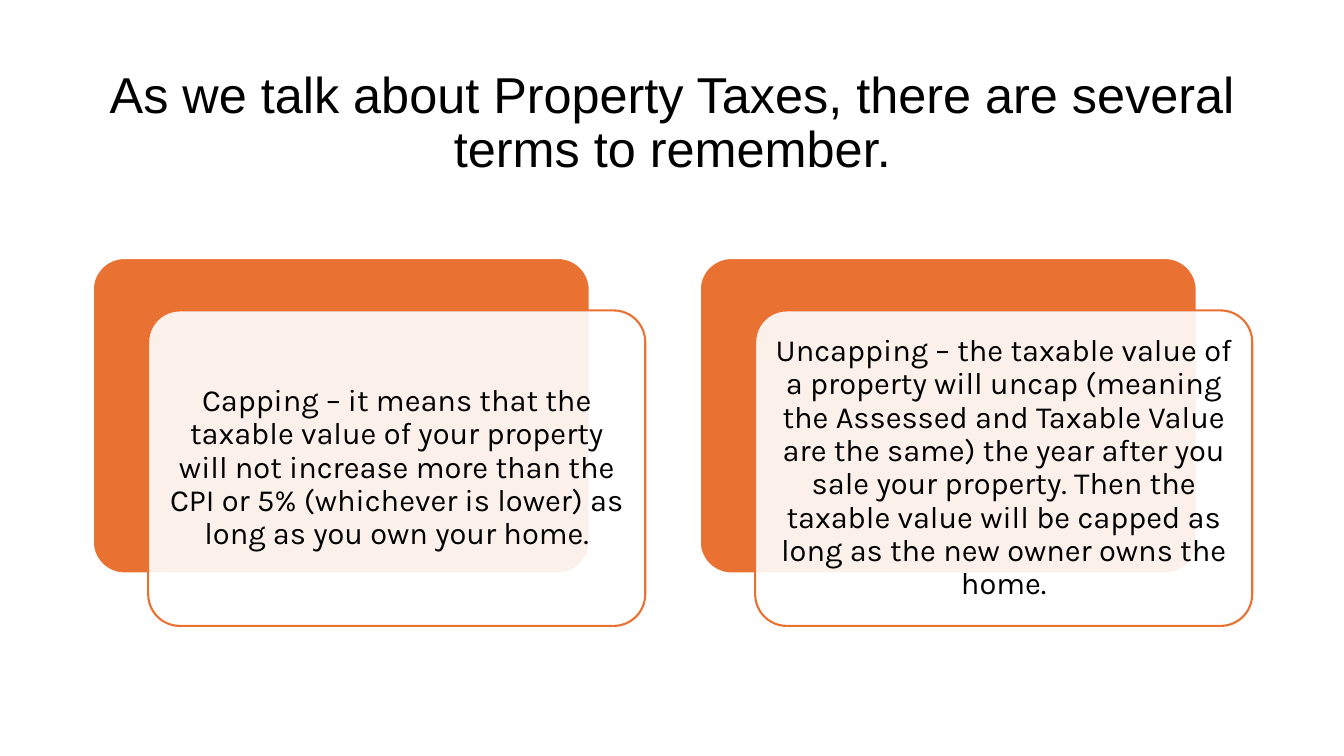
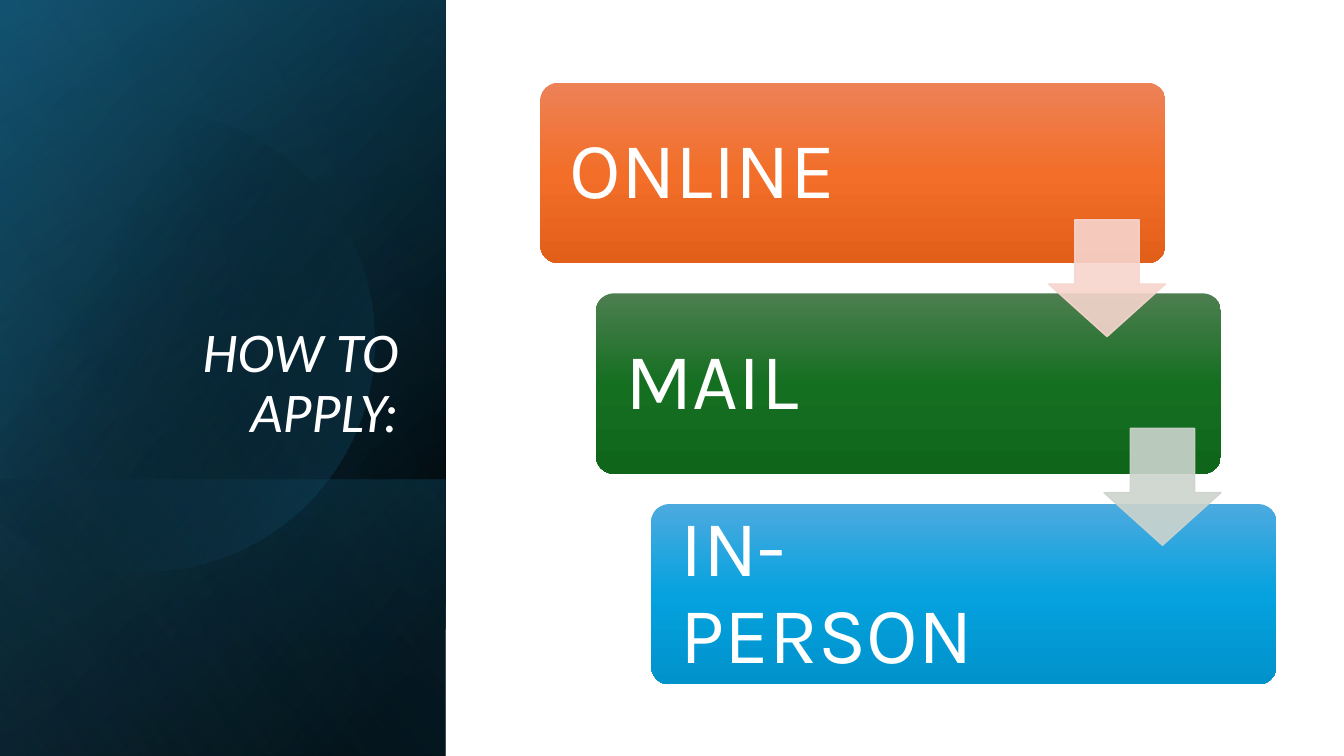
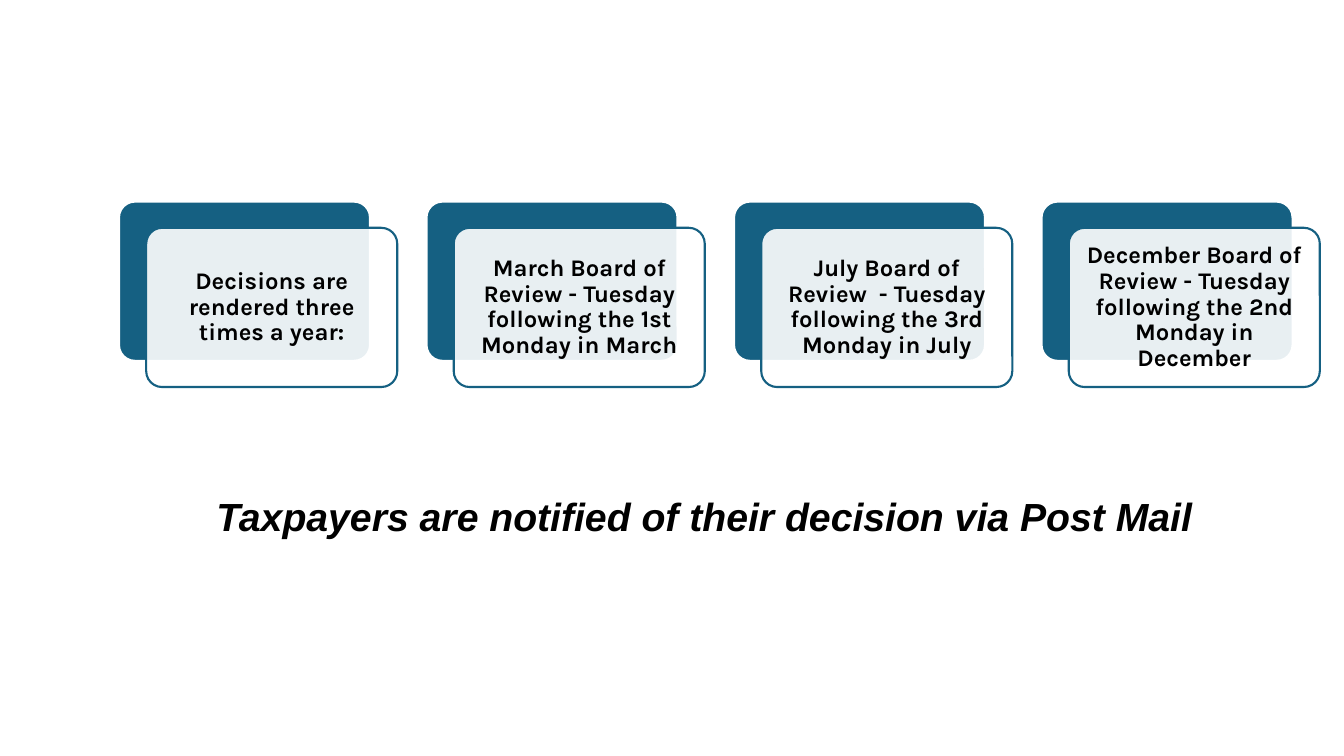
from math import acos, cos, pi, sin

from lxml import etree
from pptx import Presentation
from pptx import util as u
from pptx.dml.color import RGBColor
from pptx.enum import shapes, text
from pptx.oxml.ns import qn

COLOURS = {
    "white": "FFFFFF", "black": "000000",
    "orange": "E97132", "teal": "156082",
    "deep teal": "104862", "sky": "46B1E1",
    "pale orange": "F7D5CE", "pale green": "CCD4CD",
}
STEP_GRADIENTS = {
    "ONLINE": ("ED8257", "F26E29", "E25F1A"),
    "MAIL": ("4D7E50", "156F21", "0F661B"),
    "IN-PERSON": ("4CAADF", "05A2DF", "0092CB"),
}
CENTER, RIGHT, LEFT = text.PP_ALIGN.CENTER, text.PP_ALIGN.RIGHT, text.PP_ALIGN.LEFT
MIDDLE, BOTTOM, TOP = text.MSO_ANCHOR.MIDDLE, text.MSO_ANCHOR.BOTTOM, text.MSO_ANCHOR.TOP
ROUNDED = shapes.MSO_SHAPE.ROUNDED_RECTANGLE


# Fills and lines
def rgb(name):
    return RGBColor.from_string(COLOURS[name])


def set_alpha(shape, fill_tag, percent):
    for colour in shape._element.spPr.findall(f"{fill_tag}/{qn('a:srgbClr')}"):
        etree.SubElement(colour, qn("a:alpha")).set("val", str(percent * 1000))


def paint(shape, fill, line, weight=1.5, alpha=100, line_alpha=100):
    shape.shadow.inherit = False
    shape.fill.solid()
    shape.fill.fore_color.rgb = rgb(fill)
    shape.line.color.rgb = rgb(line)
    shape.line.width = u.Pt(weight)
    if alpha < 100:
        set_alpha(shape, qn("a:solidFill"), alpha)
    if line_alpha < 100:
        set_alpha(shape, f"{qn('a:ln')}/{qn('a:solidFill')}", line_alpha)


def paint_gradient(shape, stops, angle):
    """Each stop is (position %, hex colour, opacity %); the angle runs clockwise."""
    shape.shadow.inherit = False
    shape.line.fill.background()
    shape.fill.gradient()
    gradient = shape._element.spPr.find(qn("a:gradFill"))
    stop_list = gradient.find(qn("a:gsLst"))
    for default_stop in list(stop_list):
        stop_list.remove(default_stop)
    for position, colour, opacity in stops:
        stop = etree.SubElement(stop_list, qn("a:gs"), pos=str(position * 1000))
        tint = etree.SubElement(stop, qn("a:srgbClr"), val=colour)
        if opacity < 100:
            etree.SubElement(tint, qn("a:alpha"), val=str(opacity * 1000))
    gradient.find(qn("a:lin")).set("ang", str(angle * 60000))


# Text
def write(shape, wording, size, font, colour="black", align=CENTER, anchor=MIDDLE,
          bold=False, italic=False, spacing=0.9, insets=(0.1, 0.05, 0.1, 0.05)):
    frame = shape.text_frame
    frame.text = wording
    frame.word_wrap = True
    frame.vertical_anchor = anchor
    (frame.margin_left, frame.margin_top,
     frame.margin_right, frame.margin_bottom) = map(u.Inches, insets)
    paragraph = frame.paragraphs[0]
    paragraph.alignment = align
    paragraph.line_spacing = spacing
    style = paragraph.runs[0].font
    style.name, style.size = font, u.Pt(size)
    style.bold, style.italic = bold, italic
    style.color.rgb = rgb(colour)


def add_heading(slide, box, wording, size, font="Arial", **style):
    write(slide.shapes.add_textbox(*map(u.Inches, box)), wording, size, font, **style)


def add_preset(slide, preset, box, *adjustments):
    shape = slide.shapes.add_shape(preset, *map(u.Inches, box))
    for index, value in enumerate(adjustments):
        shape.adjustments[index] = value
    return shape


# Row of text cards, each in front of a coloured backing
def add_card_row(slide, wordings, first, size, pitch, shift, colour, points, inset, bold=False):
    for index, wording in enumerate(wordings):
        left, top = first[0] + index * pitch, first[1]
        backing = add_preset(slide, ROUNDED, (left, top, *size), 0.1)
        paint(backing, colour, "white")
        card = add_preset(slide, ROUNDED, (left + shift[0], top + shift[1], *size), 0.1)
        paint(card, "white", colour, alpha=90)
        write(card, wording, points, "Karla", bold=bold, insets=(inset,) * 4)


# Dark side panel with layered gradients and a disc cut by the slide edge
def add_panel_layer(slide, top, height, stops, angle):
    layer = add_preset(slide, shapes.MSO_SHAPE.RECTANGLE, (0, top, 4.42, height))
    paint_gradient(layer, stops, angle)


def add_disc(slide, center_x, center_y, radius, steps=120):
    reach = acos(-center_x / radius)
    angles = [reach * (2 * step / steps - 1) for step in range(steps + 1)]
    rim = [(u.Inches(center_x + radius * cos(a)), u.Inches(center_y + radius * sin(a)))
           for a in angles]
    outline = slide.shapes.build_freeform(*rim[0])
    outline.add_line_segments(rim[1:], close=True)
    paint_gradient(outline.convert_to_shape(),
                   [(29, COLOURS["black"], 0), (100, COLOURS["teal"], 43)], 30)


def add_side_panel(slide):
    black, teal = COLOURS["black"], COLOURS["teal"]
    add_panel_layer(slide, 0, 7.5, [(8, black, 100), (100, COLOURS["deep teal"], 100)], 220)
    add_panel_layer(slide, 0, 7.5, [(0, black, 0), (99, teal, 46)], 240)
    add_panel_layer(slide, 4.76, 2.74, [(2, teal, 29), (100, black, 30)], 140)
    add_disc(slide, 1.42, 3.38, 2.29)
    add_panel_layer(slide, 0, 7.5, [(0, black, 0), (99, COLOURS["sky"], 11)], 150)


# Staircase of steps joined by arrows
def add_staircase(slide):
    for index, (wording, tints) in enumerate(STEP_GRADIENTS.items()):
        step = add_preset(slide, ROUNDED,
                          (5.36 + 0.55 * index, 0.82 + 2.09 * index, 6.2, 1.79), 0.1)
        paint_gradient(step, [(pos, tint, 100) for pos, tint in zip((0, 50, 100), tints)], 90)
        write(step, wording, 57, "Karla", "white", LEFT, insets=(0.24, 0.24, 1.96, 0.24))
    for index, colour in enumerate(("pale orange", "pale green")):
        arrow = add_preset(slide, shapes.MSO_SHAPE.DOWN_ARROW,
                           (10.4 + 0.55 * index, 2.18 + 2.07 * index, 1.16, 1.16), 0.55, 0.45)
        paint(arrow, colour, colour, 1, alpha=90, line_alpha=90)


# Slides
def build_terms(slide):
    add_heading(slide, (0.92, 0.61, 11.5, 1.24),
                "As we talk about Property Taxes, there are several terms to remember.", 36)
    add_card_row(slide, [
        "Capping – it means that the taxable value of your property will not increase "
        "more than the CPI or 5% (whichever is lower) as long as you own your home.",
        "Uncapping – the taxable value of a property will uncap (meaning the Assessed "
        "and Taxable Value are the same) the year after you sale your property. Then the "
        "taxable value will be capped as long as the new owner owns the home.",
    ], (0.92, 2.56), (4.93, 3.13), 6.02, (0.55, 0.52), "orange", 22, 0.09)


def build_how_to_apply(slide):
    add_side_panel(slide)
    add_heading(slide, (0.64, 1.84, 3.41, 2.62), "HOW TO APPLY:", 40, "Calibri",
                colour="white", align=RIGHT, anchor=BOTTOM, italic=True)
    add_staircase(slide)


def build_decisions(slide):
    add_card_row(slide, [
        "Decisions are rendered three times a year:",
        "March Board of Review - Tuesday following the 1st Monday in March",
        "July Board of Review  - Tuesday following the 3rd Monday in July",
        "December Board of Review - Tuesday following the 2nd Monday in December",
    ], (1.18, 2), (2.49, 1.58), 3.05, (0.27, 0.26), "teal", 17, 0.07, bold=True)
    add_heading(slide, (0.71, 4.83, 12.55, 0.88),
                "Taxpayers are notified of their decision via Post Mail", 28,
                anchor=TOP, bold=True, italic=True, spacing=1.0)


def main():
    deck = Presentation()
    deck.slide_width, deck.slide_height = u.Inches(13.33), u.Inches(7.5)
    for build in (build_terms, build_how_to_apply, build_decisions):
        build(deck.slides.add_slide(deck.slide_layouts[6]))
    deck.save("out.pptx")


if __name__ == "__main__":
    main()
